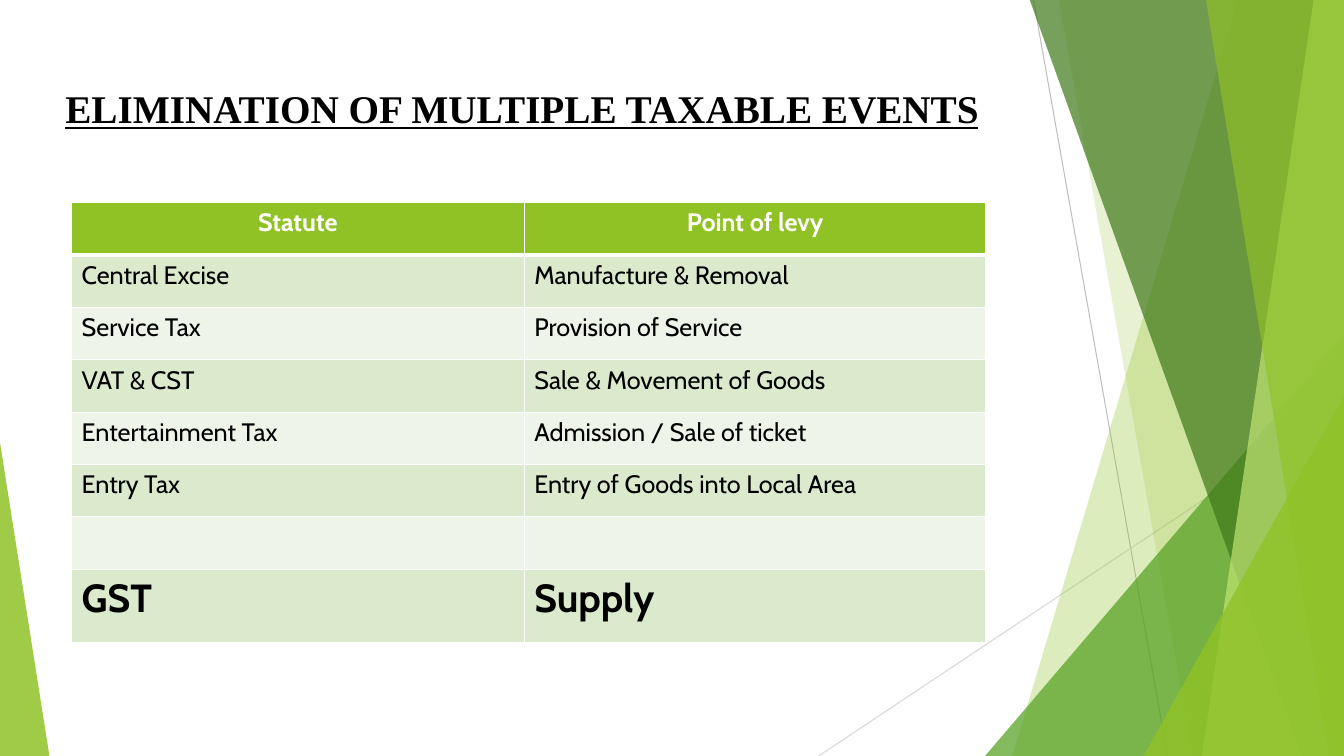
from dataclasses import dataclass

from lxml import etree
from pptx import Presentation
from pptx.dml.color import RGBColor
from pptx.enum.shapes import MSO_CONNECTOR, MSO_SHAPE
from pptx.enum.text import PP_ALIGN
from pptx.oxml.ns import qn
from pptx.util import Inches, Pt

WIDTH, HEIGHT = 13.33, 7.5
TOP = -0.01


@dataclass(frozen=True)
class Theme:
    lime: str = "90C226"
    green: str = "54A021"
    forest: str = "3F7819"
    pale_lime: str = "C0E474"
    band_dark: str = "DBE9CD"
    band_light: str = "EEF4E8"
    ray_dark: str = "BFBFBF"
    ray_light: str = "D9D9D9"
    white: str = "FFFFFF"
    black: str = "000000"
    title_font: str = "Times New Roman"
    body_font: str = "Cabin"
    large: int = 28
    body: int = 18


LEVIES = [
    ("Statute", "Point of levy"),
    ("Central Excise", "Manufacture & Removal"),
    ("Service Tax", "Provision of Service"),
    ("VAT & CST", "Sale & Movement of Goods"),
    ("Entertainment Tax", "Admission / Sale of ticket"),
    ("Entry Tax", "Entry of Goods into Local Area"),
    ("", ""),
    ("GST", "Supply"),
]


def write_text(frame, text, *, font, size, color, bold=False,
               underline=False, align=PP_ALIGN.LEFT):
    paragraph = frame.paragraphs[0]
    paragraph.alignment = align
    if not text:
        return
    run = paragraph.add_run()
    run.text = text
    run.font.name = font
    run.font.size = Pt(size)
    run.font.bold = bold
    run.font.underline = underline
    run.font.color.rgb = RGBColor.from_string(color)


def set_border(cell, side, color, points):
    """Draw one cell edge; side is L, R, T or B, given in that order."""
    line = etree.SubElement(cell._tc.get_or_add_tcPr(), qn(f"a:ln{side}"),
                            w=str(Pt(points)))
    fill = etree.SubElement(line, qn("a:solidFill"))
    etree.SubElement(fill, qn("a:srgbClr"), val=color)


class SlideBuilder:
    def __init__(self, slide, theme):
        self.slide = slide
        self.theme = theme

    def ray(self, start, end, color):
        line = self.slide.shapes.add_connector(
            MSO_CONNECTOR.STRAIGHT, *map(Inches, start + end))
        line.line.color.rgb = RGBColor.from_string(color)
        line.line.width = Pt(0.75)
        etree.SubElement(line._element.spPr, qn("a:effectLst"))

    def paint(self, shape, color, opacity):
        """Fill a shape with a see-through colour; opacity is in percent."""
        shape.shadow.inherit = False
        shape.fill.solid()
        shape.fill.fore_color.rgb = RGBColor.from_string(color)
        shape.line.fill.background()
        tint = shape._element.spPr.find(qn("a:solidFill"))[0]
        etree.SubElement(tint, qn("a:alpha"), val=str(opacity * 1000))

    def shard(self, top_left, bottom_left, color, opacity):
        """Add a band from a slanted left edge to the slide's right edge."""
        corners = [(top_left, TOP), (WIDTH, TOP), (WIDTH, HEIGHT),
                   (bottom_left, HEIGHT)]
        points = [(Inches(x), Inches(y)) for x, y in corners]
        outline = self.slide.shapes.build_freeform(*points[0], scale=1.0)
        outline.add_line_segments(points[1:], close=True)
        self.paint(outline.convert_to_shape(), color, opacity)

    def corner(self, left, top, width, peak, color, opacity):
        """Add a triangle on the bottom edge; peak 0 is left, 1 is right."""
        triangle = self.slide.shapes.add_shape(
            MSO_SHAPE.ISOSCELES_TRIANGLE, Inches(left), Inches(top),
            Inches(width), Inches(HEIGHT - top))
        triangle.adjustments[0] = peak
        self.paint(triangle, color, opacity)

    def title(self, text, left, top, width, height):
        box = self.slide.shapes.add_textbox(
            *map(Inches, (left, top, width, height)))
        box.text_frame.word_wrap = True
        write_text(box.text_frame, text, font=self.theme.title_font,
                   size=self.theme.large, color=self.theme.black,
                   bold=True, underline=True)

    def table(self, rows, left, top, widths, heights):
        table = self.slide.shapes.add_table(
            len(rows), len(widths), Inches(left), Inches(top),
            Inches(sum(widths)), Inches(sum(heights))).table
        for column, width in zip(table.columns, widths):
            column.width = Inches(width)
        for index, (row, height) in enumerate(zip(table.rows, heights)):
            row.height = Inches(height)
            for cell, text in zip(row.cells, rows[index]):
                self.table_cell(cell, text, index, index == len(rows) - 1)

    def table_cell(self, cell, text, row, is_last):
        theme = self.theme
        is_header = row == 0
        band = theme.band_dark if row % 2 else theme.band_light
        for side in "LRTB":
            under_header = (row, side) in ((0, "B"), (1, "T"))
            set_border(cell, side, theme.white, 3 if under_header else 1)
        cell.fill.solid()
        cell.fill.fore_color.rgb = RGBColor.from_string(
            theme.lime if is_header else band)
        write_text(cell.text_frame, text, font=theme.body_font,
                   size=theme.large if is_last else theme.body,
                   color=theme.white if is_header else theme.black,
                   bold=is_header or is_last,
                   align=PP_ALIGN.CENTER if is_header else PP_ALIGN.LEFT)


def main():
    presentation = Presentation()
    presentation.slide_width = Inches(WIDTH)
    presentation.slide_height = Inches(HEIGHT)
    theme = Theme()
    builder = SlideBuilder(
        presentation.slides.add_slide(presentation.slide_layouts[6]), theme)

    builder.ray((10.25, 0), (11.58, HEIGHT), theme.ray_dark)
    builder.ray((WIDTH, 4.03), (8.12, HEIGHT), theme.ray_light)
    builder.shard(12.28, 10.04, theme.lime, 30)
    builder.shard(10.5, 11.83, theme.lime, 20)
    builder.corner(9.77, 3.33, 3.56, 1, theme.green, 72)
    builder.shard(10.21, 12.91, theme.forest, 70)
    builder.shard(13.03, 11.92, theme.pale_lime, 70)
    builder.shard(11.96, 13.18, theme.lime, 65)
    builder.corner(11.34, 3.93, 1.99, 1, theme.lime, 80)
    builder.corner(0, 4.39, 0.49, 0, theme.lime, 85)

    builder.table(LEVIES, 0.71, 2.01, widths=[4.49, 4.58],
                  heights=[0.52] * 7 + [0.73])
    builder.title("ELIMINATION OF MULTIPLE TAXABLE EVENTS",
                  0.55, 0.79, 9.81, 0.57)
    presentation.save("out.pptx")


if __name__ == "__main__":
    main()
